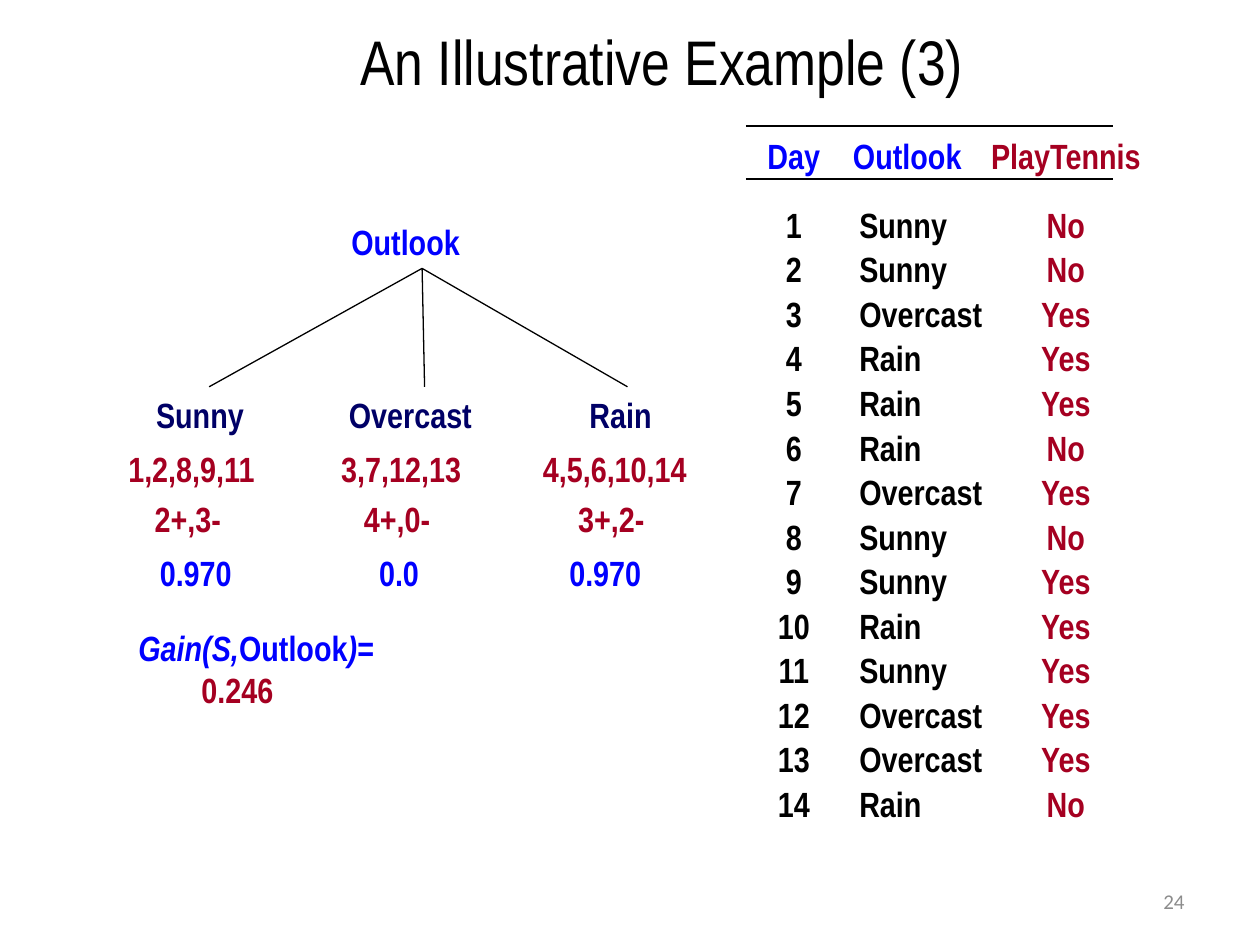
from dataclasses import dataclass

from lxml import etree
from pptx import Presentation
from pptx.dml.color import RGBColor
from pptx.enum.shapes import MSO_CONNECTOR
from pptx.enum.text import MSO_ANCHOR, PP_ALIGN
from pptx.oxml.ns import qn
from pptx.util import Inches, Pt

STRAIGHT = MSO_CONNECTOR.STRAIGHT
LEFT, CENTER, RIGHT = PP_ALIGN.LEFT, PP_ALIGN.CENTER, PP_ALIGN.RIGHT
TOP, MIDDLE, BOTTOM = MSO_ANCHOR.TOP, MSO_ANCHOR.MIDDLE, MSO_ANCHOR.BOTTOM


@dataclass(frozen=True)
class Theme:
    font: str = "Arial Narrow"
    number_font: str = "Calibri"
    title_size: int = 36
    body_size: int = 20
    number_size: int = 12
    black: str = "000000"
    blue: str = "0000FF"
    navy: str = "000066"
    red: str = "A50021"
    gray: str = "8C8C8C"


class SlideBuilder:
    def __init__(self, slide, theme):
        self.slide = slide
        self.theme = theme

    def style(self, paragraph, color, size=None, font=None, bold=True, align=LEFT):
        paragraph.alignment = align
        for run in paragraph.runs:
            run.font.name = font or self.theme.font
            run.font.size = Pt(size or self.theme.body_size)
            run.font.bold = bold
            run.font.color.rgb = RGBColor.from_string(color)

    def title(self, text, left, top, width, height):
        shape = self.slide.shapes.title
        shape.left, shape.top = Inches(left), Inches(top)
        shape.width, shape.height = Inches(width), Inches(height)
        frame = shape.text_frame
        frame.text = text
        frame.word_wrap = False
        frame.vertical_anchor = TOP
        self.style(frame.paragraphs[0], self.theme.black, self.theme.title_size, bold=False)

    def text(self, text, left, top, width, color, height=0.43):
        shape = self.slide.shapes.add_textbox(
            Inches(left), Inches(top), Inches(width), Inches(height))
        frame = shape.text_frame
        frame.text = text
        frame.word_wrap = False
        self.style(frame.paragraphs[0], color)
        return frame

    def gain(self, left, top, width, height):
        frame = self.text("", left, top, width, self.theme.blue, height)
        formula = frame.paragraphs[0]
        for text, italic in (("Gain(S,", True), ("Outlook", False), (")", True), ("=", False)):
            run = formula.add_run()
            run.text = text
            run.font.italic = italic
        self.style(formula, self.theme.blue)
        value = frame.add_paragraph()
        value.text = "\t0.246"
        self.style(value, self.theme.red)

    def slide_number(self, text, left, top, width, height):
        frame = self.text(text, left, top, width, self.theme.gray, height)
        frame.word_wrap = True
        frame.vertical_anchor = MIDDLE
        self.style(frame.paragraphs[0], self.theme.gray, self.theme.number_size,
                   self.theme.number_font, False, RIGHT)

    def line(self, start, end):
        connector = self.slide.shapes.add_connector(
            STRAIGHT, *(Inches(value) for value in (*start, *end)))
        connector.line.color.rgb = RGBColor.from_string(self.theme.black)
        connector.line.width = Pt(0.75)
        properties = connector.element.find(qn("p:spPr"))
        etree.SubElement(properties, qn("a:effectLst"))

    def table(self, rows, left, top, widths, heights):
        frame = self.slide.shapes.add_table(
            len(rows), len(widths), Inches(left), Inches(top),
            Inches(sum(widths)), Inches(sum(heights)))
        table = frame.table
        table.first_row = table.horz_banding = False
        for column, width in zip(table.columns, widths):
            column.width = Inches(width)
        for row, height in zip(table.rows, heights):
            row.height = Inches(height)
        body_colors = (self.theme.black, self.theme.black, self.theme.red)
        header_colors = (self.theme.blue, self.theme.blue, self.theme.red)
        for row_index, values in enumerate(rows):
            colors = body_colors if row_index else header_colors
            outlook_margin = 0.14 if row_index else 0.09
            for column_index, value in enumerate(values):
                cell = table.cell(row_index, column_index)
                cell.fill.background()
                cell.vertical_anchor = BOTTOM
                cell.margin_left = Inches(outlook_margin if column_index == 1 else 0)
                cell.margin_right = cell.margin_top = 0
                cell.margin_bottom = Inches(0.02)
                cell.text_frame.text = value
                align = LEFT if column_index == 1 else CENTER
                self.style(cell.text_frame.paragraphs[0], colors[column_index], align=align)


def main():
    presentation = Presentation()
    presentation.slide_width, presentation.slide_height = Inches(10), Inches(7.5)
    theme = Theme()
    slide = presentation.slides.add_slide(presentation.slide_layouts[5])
    builder = SlideBuilder(slide, theme)

    builder.title("An Illustrative Example (3)", 2.76, 0.13, 4.99, 0.7)

    builder.text("Outlook", 2.69, 1.7, 1.33, theme.blue)
    root = (3.35, 2.13)
    for leaf_x in (1.66, 3.37, 4.98):
        builder.line(root, (leaf_x, 3.07))

    levels = [
        (3.07, theme.navy, [("Sunny", 1.14, 1.05), ("Overcast", 2.67, 1.39), ("Rain", 4.58, 0.8)]),
        (3.5, theme.red, [("1,2,8,9,11", 0.92, 1.43), ("3,7,12,13", 2.61, 1.36),
                          ("4,5,6,10,14", 4.21, 1.59)]),
        (3.9, theme.red, [("2+,3-", 1.13, 0.84), ("4+,0-", 2.79, 0.84), ("3+,2-", 4.49, 0.84)]),
        (4.33, theme.blue, [("0.970", 1.17, 0.77), ("0.0", 2.91, 0.52), ("0.970", 4.42, 0.77)]),
    ]
    for top, color, labels in levels:
        for text, left, width in labels:
            builder.text(text, left, top, width, color)
    builder.gain(1, 4.92, 2.07, 0.77)

    examples = [
        ("Sunny", "No"), ("Sunny", "No"), ("Overcast", "Yes"), ("Rain", "Yes"),
        ("Rain", "Yes"), ("Rain", "No"), ("Overcast", "Yes"), ("Sunny", "No"),
        ("Sunny", "Yes"), ("Rain", "Yes"), ("Sunny", "Yes"), ("Overcast", "Yes"),
        ("Overcast", "Yes"), ("Rain", "No"),
    ]
    rows = [("Day", "Outlook", "PlayTennis")]
    rows += [(str(day), *example) for day, example in enumerate(examples, 1)]
    row_pitch = 4.6 / 13
    heights = [0.42, 0.55] + [row_pitch] * (len(examples) - 1)
    builder.table(rows, 5.92, 1, (0.76, 1.12, 1.32), heights)
    for rule_y in (1, 1.42):
        builder.line((5.92, rule_y), (8.83, rule_y))

    builder.slide_number("24", 7.17, 6.95, 2.33, 0.4)
    presentation.save("out.pptx")


if __name__ == "__main__":
    main()
